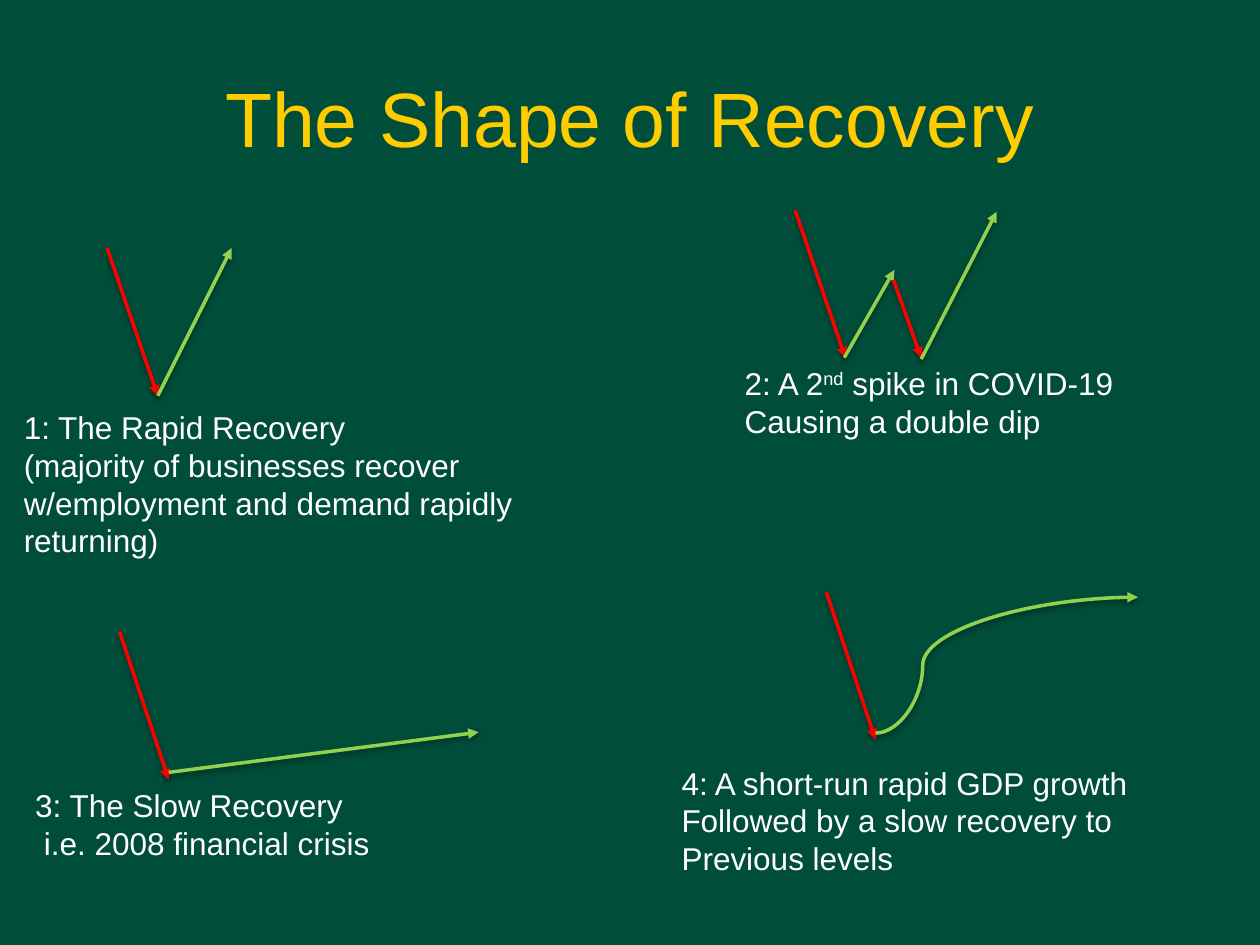
from lxml.etree import SubElement
from pptx import Presentation
from pptx.dml.color import RGBColor
from pptx.enum.shapes import MSO_CONNECTOR
from pptx.enum.text import MSO_ANCHOR, MSO_AUTO_SIZE, PP_ALIGN
from pptx.oxml.ns import qn
from pptx.util import Cm, Pt

COLORS = {"background": "004D39", "title": "FFCC00", "text": "FFFFFF",
          "fall": "FF0000", "rise": "92D050"}
FONT = "Arial"
TITLE = "The Shape of Recovery"
CURVE_BEND = 0.18

SCENARIOS = [
    {
        "arrows": [("fall", 2.16, 5.0, 3.18, 7.98), ("rise", 3.18, 7.98, 4.67, 5.0)],
        "box": (0.23, 8.1, 10.44, 3.33),
        "lines": [["1: The Rapid Recovery"], ["(majority of businesses recover"],
                  ["w/employment and demand rapidly"], ["returning)"]],
    },
    {
        "arrows": [("fall", 16.03, 4.24, 17.04, 7.21), ("rise", 17.02, 7.21, 18.03, 5.44),
                   ("fall", 18.01, 5.64, 18.57, 7.21), ("rise", 18.57, 7.24, 20.09, 4.27)],
        "box": (14.76, 7.21, 8.08, 1.8),
        "lines": [["2: A 2", "nd", " spike in COVID-19"], ["Causing a double dip"]],
    },
    {
        "arrows": [("fall", 2.41, 12.73, 3.4, 15.72), ("rise", 3.4, 15.57, 9.65, 14.76)],
        "box": (0.46, 15.72, 7.32, 1.8),
        "lines": [["3: The Slow Recovery"], [" i.e. 2008 financial crisis"]],
    },
    {
        "arrows": [("fall", 16.66, 11.94, 17.65, 14.91)],
        "curve": ("rise", 17.65, 14.78, 22.94, 12.04),
        "box": (13.49, 15.27, 9.58, 2.57),
        "lines": [["4: A short-run rapid GDP growth"], ["Followed by a slow recovery to"],
                  ["Previous levels"]],
    },
]


def color(name):
    return RGBColor.from_string(COLORS[name])


def set_font(paragraph, size, color_name):
    paragraph.font.name = FONT
    paragraph.font.size = Pt(size)
    paragraph.font.color.rgb = color(color_name)


def add_arrow(slide, direction, *ends, kind=MSO_CONNECTOR.STRAIGHT):
    arrow = slide.shapes.add_connector(kind, *map(Cm, ends))
    arrow.line.color.rgb = color(direction)
    arrow.line.width = Pt(2)
    SubElement(arrow.line._get_or_add_ln(), qn("a:tailEnd"), type="triangle")
    return arrow


def add_curve(slide, direction, *ends):
    curve = add_arrow(slide, direction, *ends, kind=MSO_CONNECTOR.CURVE)
    adjustments = curve._element.spPr.find(qn("a:prstGeom")).find(qn("a:avLst"))
    SubElement(adjustments, qn("a:gd"), name="adj1", fmla=f"val {round(CURVE_BEND * 100000)}")


def add_caption(slide, box, lines):
    frame = slide.shapes.add_textbox(*map(Cm, box)).text_frame
    frame.word_wrap = False
    frame.auto_size = MSO_AUTO_SIZE.SHAPE_TO_FIT_TEXT
    for index, parts in enumerate(lines):
        paragraph = frame.add_paragraph() if index else frame.paragraphs[0]
        set_font(paragraph, 18, "text")
        for part in parts:
            run = paragraph.add_run()
            run.text = part
            if part == "nd":
                run._r.get_or_add_rPr().set("baseline", "30000")


def main():
    presentation = Presentation()
    presentation.slide_width, presentation.slide_height = Cm(25.4), Cm(19.05)
    slide = presentation.slides.add_slide(presentation.slide_layouts[5])
    slide.background.fill.solid()
    slide.background.fill.fore_color.rgb = color("background")

    title = slide.shapes.title
    title.left, title.top, title.width, title.height = map(Cm, (1.27, 0.76, 22.86, 3.18))
    title.text_frame.text = TITLE
    title.text_frame.vertical_anchor = MSO_ANCHOR.MIDDLE
    title.text_frame.paragraphs[0].alignment = PP_ALIGN.CENTER
    set_font(title.text_frame.paragraphs[0], 44, "title")

    for scenario in SCENARIOS:
        for arrow in scenario["arrows"]:
            add_arrow(slide, *arrow)
        if "curve" in scenario:
            add_curve(slide, *scenario["curve"])
        add_caption(slide, scenario["box"], scenario["lines"])

    presentation.save("out.pptx")


if __name__ == "__main__":
    main()
